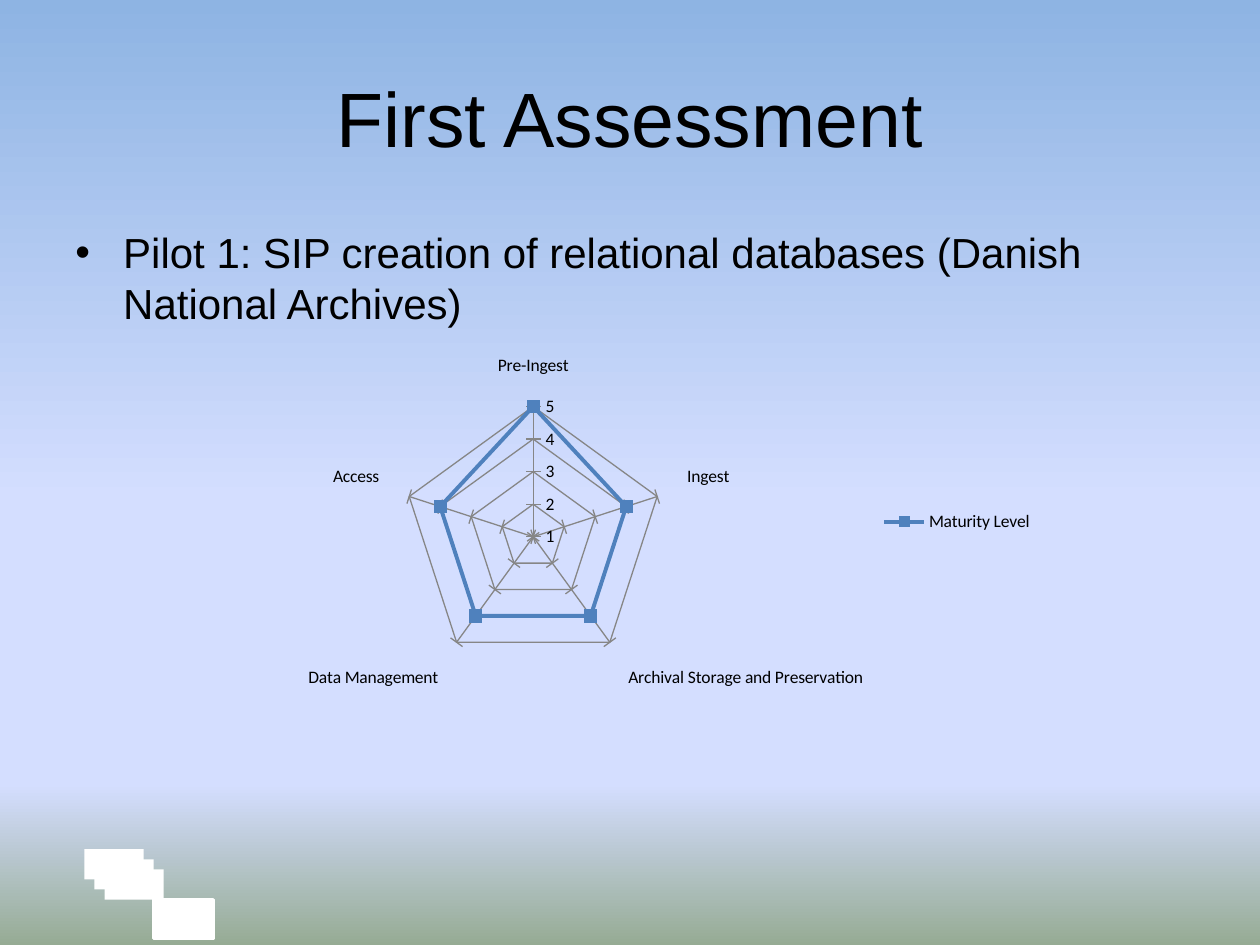
import lxml.etree
import pptx
import pptx.chart.data
import pptx.dml.color
import pptx.enum.chart
import pptx.enum.shapes
import pptx.enum.text
import pptx.oxml.ns
import pptx.util

Inches, Pt = pptx.util.Inches, pptx.util.Pt
qn = pptx.oxml.ns.qn

COLORS = {"text": "000000", "block": "FFFFFF", "series": "4F81BD", "grid": "868686"}
BACKGROUND = [(0, "8EB4E3"), (53, "D4DEFF"), (83, "D4DEFF"), (100, "96AB94")]
TITLE = "First Assessment"
BULLET = "Pilot 1: SIP creation of relational databases (Danish National Archives)"
SERIES = "Maturity Level"
LEVELS = {
    "Pre-Ingest": 5,
    "Ingest": 4,
    "Archival Storage and Preservation": 4,
    "Data Management": 4,
    "Access": 4,
}
LARGE_BLOCK = (1.22, 7.14, 0.47, 0.31)
SMALL_BLOCKS = [(0.67 + 0.08 * i, 6.74 + 0.08 * i, 0.47, 0.24) for i in (2, 1, 0)]


def rgb(name):
    return pptx.dml.color.RGBColor.from_string(COLORS[name])


def box(values):
    return [Inches(v) for v in values]


def style(font, size, name="Arial"):
    for key, value in {"size": Pt(size), "name": name, "bold": False}.items():
        setattr(font, key, value)
    font.color.rgb = rgb("text")


def set_background(s):
    fill = s.background.fill
    fill.gradient()
    fill.gradient_angle = 270
    stops = s.background._cSld.find(".//" + qn("a:gsLst"))
    for stop in list(stops):
        stops.remove(stop)
    for position, color in BACKGROUND:
        stop = lxml.etree.SubElement(stops, qn("a:gs"), pos=str(position * 1000))
        lxml.etree.SubElement(stop, qn("a:srgbClr"), val=color)


def add_block(s, position):
    sp = s.shapes.add_shape(pptx.enum.shapes.MSO_SHAPE.RECTANGLE, *box(position))
    sp.shadow.inherit = False
    sp.fill.solid()
    sp.fill.fore_color.rgb = rgb("block")
    sp.line.fill.background()
    return sp


def add_title(s):
    sp = s.shapes.title
    sp.left, sp.top, sp.width, sp.height = box((0.5, 0.3, 9, 1.25))
    tf = sp.text_frame
    tf.text = TITLE
    tf.vertical_anchor = pptx.enum.text.MSO_ANCHOR.MIDDLE
    p = tf.paragraphs[0]
    p.alignment = pptx.enum.text.PP_ALIGN.CENTER
    style(p.runs[0].font, 44)


def add_body(s):
    tf = s.shapes.add_textbox(*box((0.5, 1.75, 9, 4.95))).text_frame
    tf.word_wrap = True
    p = tf.paragraphs[0]
    pPr = p._p.get_or_add_pPr()
    pPr.set("marL", str(Inches(0.38)))
    pPr.set("indent", str(-Inches(0.38)))
    lxml.etree.SubElement(pPr, qn("a:buFont"), typeface="Arial")
    lxml.etree.SubElement(pPr, qn("a:buChar"), char="•")
    r = p.add_run()
    r.text = BULLET
    style(r.font, 24)


def add_radar(s):
    data = pptx.chart.data.CategoryChartData()
    data.categories = list(LEVELS)
    data.add_series(SERIES, list(LEVELS.values()))
    kind = pptx.enum.chart.XL_CHART_TYPE.RADAR_MARKERS
    chart = s.shapes.add_chart(kind, *box((2.32, 2.18, 5.98, 3.92)), data).chart
    style(chart.font, 10, "Calibri")
    chart.has_title = False
    chart.has_legend = True
    chart.legend.position = pptx.enum.chart.XL_LEGEND_POSITION.RIGHT
    chart.legend.include_in_layout = False

    tick = pptx.enum.chart.XL_TICK_MARK
    axis_formats = [
        (chart.category_axis, {"major_tick_mark": tick.OUTSIDE}),
        (chart.value_axis, {"major_tick_mark": tick.CROSS, "minimum_scale": 1,
                            "maximum_scale": 5, "major_unit": 1}),
    ]
    for axis, formats in axis_formats:
        formats.update(has_major_gridlines=True, minor_tick_mark=tick.NONE)
        for key, value in formats.items():
            setattr(axis, key, value)
        for line in (axis.format.line, axis.major_gridlines.format.line):
            line.color.rgb = rgb("grid")
            line.width = Pt(0.75)

    plot = chart.plots[0]
    plot.vary_by_categories = False
    series = plot.series[0]
    series.format.line.color.rgb = rgb("series")
    series.format.line.width = Pt(2.25)
    marker = series.marker
    marker.style = pptx.enum.chart.XL_MARKER_STYLE.SQUARE
    marker.size = 7
    marker.format.fill.solid()
    marker.format.fill.fore_color.rgb = rgb("series")
    marker.format.line.color.rgb = rgb("series")


def main():
    prs = pptx.Presentation()
    prs.slide_width, prs.slide_height = box((10, 7.5))
    s = prs.slides.add_slide(prs.slide_layouts[5])
    set_background(s)
    large = add_block(s, LARGE_BLOCK)
    large.line.color.rgb = rgb("block")
    large.line.width = Pt(2)
    for position in SMALL_BLOCKS:
        add_block(s, position)
    add_title(s)
    add_body(s)
    add_radar(s)
    prs.save("out.pptx")


if __name__ == "__main__":
    main()
